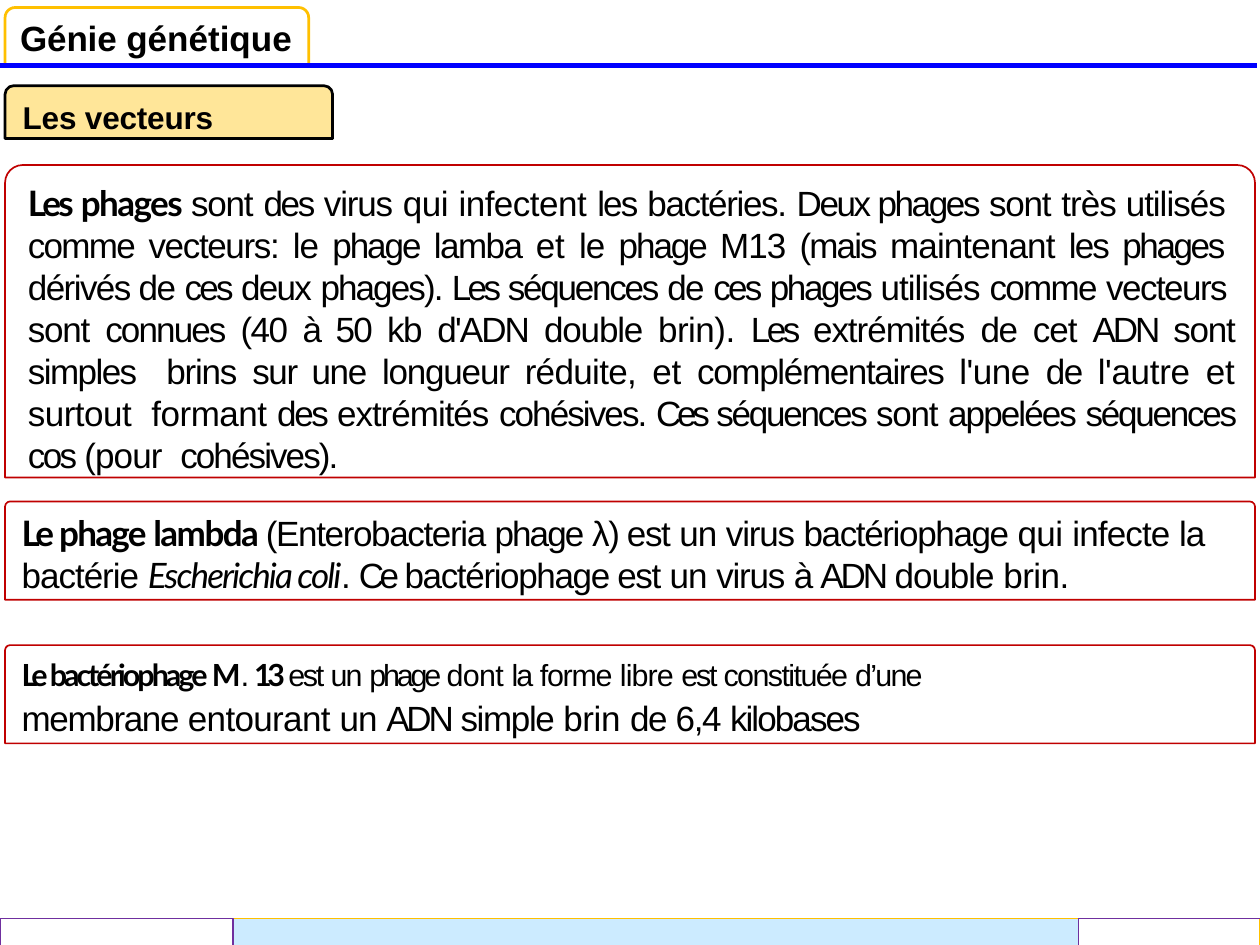
from pptx import Presentation
from pptx.dml.color import RGBColor
from pptx.enum.shapes import MSO_CONNECTOR, MSO_SHAPE
from pptx.enum.text import MSO_ANCHOR, PP_ALIGN
from pptx.oxml.ns import qn
from pptx.util import Inches, Pt
from lxml.etree import SubElement

W, H = 10, 7.5
LEFT, PANEL_W = 0.04, 9.92
FOOT_TOP, FOOT_L, FOOT_R = 7.29, 1.85, 8.56
RED, GOLD, PURPLE = "C00000", "FFC000", "6F2F9F"

BOLD = {"font": "Lato", "bold": True}
ITALIC = {"font": "Lato", "italic": True}
PLAIN = {"font": "Arial"}
HEAD = {"font": "Arial", "bold": True}
RAISED = {"size": 30, "baseline": 1000}

PHAGES = [[
    (BOLD, [("Les ", -1.6), ("phages ", -0.9)]),
    (PLAIN, [
        ("sont ", -0.7), ("des ", -1.4), ("virus ", -0.7), ("qui infectent ", -0.3),
        ("les ", -1.1), ("bactéries. ", -0.8), ("Deux phages ", -1.4), ("sont ", -0.7),
        ("très utilisés  ", -0.6), ("comme ", -1), ("vecteurs: ", -0.8), ("le ", -0.6),
        ("phage ", -1.2), ("lamba ", -0.9), ("et ", -0.1), ("le ", -0.6),
        ("phage ", -1.2), ("M13 ", -0.6), ("(mais ", -1.1), ("maintenant ", -0.5),
        ("les ", -1.1), ("phages  ", -1.4), ("dérivés de ", -0.9), ("ces ", -1.6),
        ("deux ", -1), ("phages). ", -1.1), ("Les ", -2), ("séquences ", -1.3),
        ("de ", -0.9), ("ces ", -1.6), ("phages ", -1.4), ("utilisés ", -0.6),
        ("comme ", -1), ("vecteurs  ", -0.9), ("sont ", -0.7), ("connues ", -1.1),
        ("(40 ", -0.9), ("à ", -1.6), ("50 ", -1.1), ("kb ", -0.8),
        ("d'ADN ", -1.1), ("double ", -0.7), ("brin). ", -0.3), ("Les ", -2),
        ("extrémités ", -0.6), ("de ", -0.8), ("cet ", -0.6), ("ADN ", -1.8),
        ("sont ", -0.7), ("simples  ", -0.9), ("brins ", -0.7), ("sur une ", -0.8),
        ("longueur ", -0.7), ("réduite, ", -0.4), ("et ", -0.1), ("complémentaires ", -0.8),
        ("l'une ", -0.3), ("de ", -0.9), ("l'autre ", -0.2), ("et ", -0.1),
        ("surtout  formant ", -0.3), ("des ", -1.4), ("extrémités ", -0.6),
        ("cohésives. ", -1.1), ("Ces ", -2.4), ("séquences ", -1.3), ("sont ", -0.7),
        ("appelées ", -1.1), ("séquences ", -1.3), ("cos ", -1.5), ("(pour  ", -0.5),
        ("cohésives).", -1.1)]),
]]
LAMBDA = [
    [(BOLD, [("Le ", -2), ("phage ", -1), ("lambda ", -0.9)]),
     (PLAIN, [("(Enterobacteria ", -0.8), ("phage ", -1.1), ("λ) est ", -0.8), ("un ", -0.6),
              ("virus ", -0.7), ("bactériophage ", -0.8), ("qui ", -0.3), ("infecte ", -0.5),
              ("la", -0.7)])],
    [(PLAIN, [("bactérie ", -0.6)]),
     (ITALIC, [("Escherichia coli", -1.1)]),
     (PLAIN, [(". ", -1.1), ("Ce ", -2.5), ("bactériophage est ", -0.8), ("un ", -0.6),
              ("virus ", -0.7), ("à ", -1.6), ("ADN ", -1.8), ("double ", -0.6),
              ("brin.", -0.3)])],
]
M13 = [
    [(BOLD | RAISED, [("Le ", -3), ("bactériophage ", -1.7), ("M", -3.5)]),
     (PLAIN | {"size": 18}, [(". ", -2.4)]),
     (BOLD | RAISED, [("13 ", -2.4)]),
     (PLAIN | RAISED, [("est ", -1.3), ("un ", -1), ("phage ", -1.8), ("dont ", -0.4),
                       ("la ", -1.1), ("forme ", -0.7), ("libre ", -0.5), ("est ", -1.3),
                       ("constituée ", -0.9), ("d’une", -1)])],
    [(PLAIN, [("membrane ", -0.8), ("entourant ", -0.4), ("un ", -0.6), ("ADN ", -1.8),
              ("simple ", -0.8), ("brin ", -0.2), ("de ", -0.9), ("6,4 ", -0.8),
              ("kilobases", -1.1)])],
]


def rgb(value):
    """Turn a hex string into a colour."""
    return RGBColor.from_string(value)


def paint(sp, fill=None, line=None, width=0.96):
    """Set fill and outline, without shadow."""
    sp.shadow.inherit = False
    if fill:
        sp.fill.solid()
        sp.fill.fore_color.rgb = rgb(fill)
    else:
        sp.fill.background()
    if line:
        sp.line.color.rgb = rgb(line)
        sp.line.width = Pt(width)
    else:
        sp.line.fill.background()


def write(tf, paragraphs, margins, align=PP_ALIGN.LEFT, spacing=None):
    """Write styled paragraphs run by run from the top of a frame."""
    tf.word_wrap = True
    tf.vertical_anchor = MSO_ANCHOR.TOP
    tf.margin_left, tf.margin_top, tf.margin_right = map(Inches, margins)
    tf.margin_bottom = 0
    for i, groups in enumerate(paragraphs):
        p = tf.paragraphs[0] if i == 0 else tf.add_paragraph()
        p.alignment = align
        p.space_before = Pt(0)
        p.line_spacing = spacing
        for style, words in groups:
            for text, gap in words:
                r = p.add_run()
                r.text = text
                r.font.name = style["font"]
                r.font.size = Pt(style.get("size", 20))
                r.font.bold = style.get("bold", False)
                r.font.italic = style.get("italic", False)
                r.font.color.rgb = rgb("000000")
                rPr = r._r.get_or_add_rPr()
                rPr.set("spc", str(round(gap * 100)))
                if "baseline" in style:
                    rPr.set("baseline", str(style["baseline"]))


def tab(s, box, radius, **colours):
    """Draw a box whose two top corners are rounded."""
    sp = s.shapes.add_shape(MSO_SHAPE.ROUND_2_SAME_RECTANGLE, *map(Inches, box))
    sp.adjustments[0] = radius / min(box[2:])
    paint(sp, **colours)
    return sp


def polyline(s, points, colour):
    """Draw an open outline through the points."""
    fb = s.shapes.build_freeform(*map(Inches, points[0]), scale=1.0)
    fb.add_line_segments([tuple(map(Inches, pt)) for pt in points[1:]], close=False)
    paint(fb.convert_to_shape(), line=colour)


def footer(s, top, left, right):
    """Draw the three-part band at the foot of the slide."""
    band = s.shapes.add_shape(MSO_SHAPE.RECTANGLE, *map(Inches, (left, top, right - left, H - top)))
    paint(band, fill="CCEBFF")
    polyline(s, [(W, H), (W, top), (0, top), (0, H)], GOLD)
    polyline(s, [(left, H), (left, top), (0, top), (0, H)], PURPLE)
    polyline(s, [(W, top), (right, top), (right, H)], PURPLE)


def header(s, box):
    """Place the title in its tab above the blue rule."""
    x, y, w, h = box
    tab(s, box, 0.08, line=GOLD, width=1.56)
    t = s.shapes.title
    t.left, t.top, t.width, t.height = map(Inches, (x + 0.11, y + 0.05, w - 0.2, h - 0.1))
    write(t.text_frame, [[(HEAD, [("Génie ", -0.1), ("génétique", 0)])]], (0.01, 0.02, 0))
    rule = s.shapes.add_connector(MSO_CONNECTOR.STRAIGHT, 0, Inches(y + h), Inches(9.98), Inches(y + h))
    rule.line.color.rgb = rgb("0000FF")
    rule.line.width = Pt(3)
    SubElement(rule._element.spPr, qn("a:effectLst"))


def section(s, box):
    """Place the section heading."""
    sp = tab(s, box, 0.07, fill="FFE699", line="000000", width=1.56)
    write(sp.text_frame, [[(HEAD | {"size": 18}, [("Les vecteurs", -0.1)])]], (0.12, 0.08, 0))


def panel(s, top, height, paragraphs, radius=0.04, indent=0.12, inset=0.07, spacing=None):
    """Place a red-edged panel of justified text."""
    sp = tab(s, (LEFT, top, PANEL_W, height), radius, fill="FFFFFF", line=RED)
    write(sp.text_frame, paragraphs, (indent, inset, 0.12), PP_ALIGN.JUSTIFY, spacing)


def main():
    """Build the slide and save it."""
    prs = Presentation()
    prs.slide_width, prs.slide_height = Inches(W), Inches(H)
    s = prs.slides.add_slide(prs.slide_layouts[5])
    footer(s, FOOT_TOP, FOOT_L, FOOT_R)
    header(s, (LEFT, 0.06, 2.41, 0.46))
    section(s, (LEFT, 0.68, 2.6, 0.42))
    panel(s, 1.31, 2.48, PHAGES, radius=0.14, indent=0.14, inset=0.09)
    panel(s, 3.98, 0.78, LAMBDA)
    panel(s, 5.12, 0.78, M13, spacing=Pt(23.8))
    prs.save("out.pptx")


if __name__ == "__main__":
    main()
